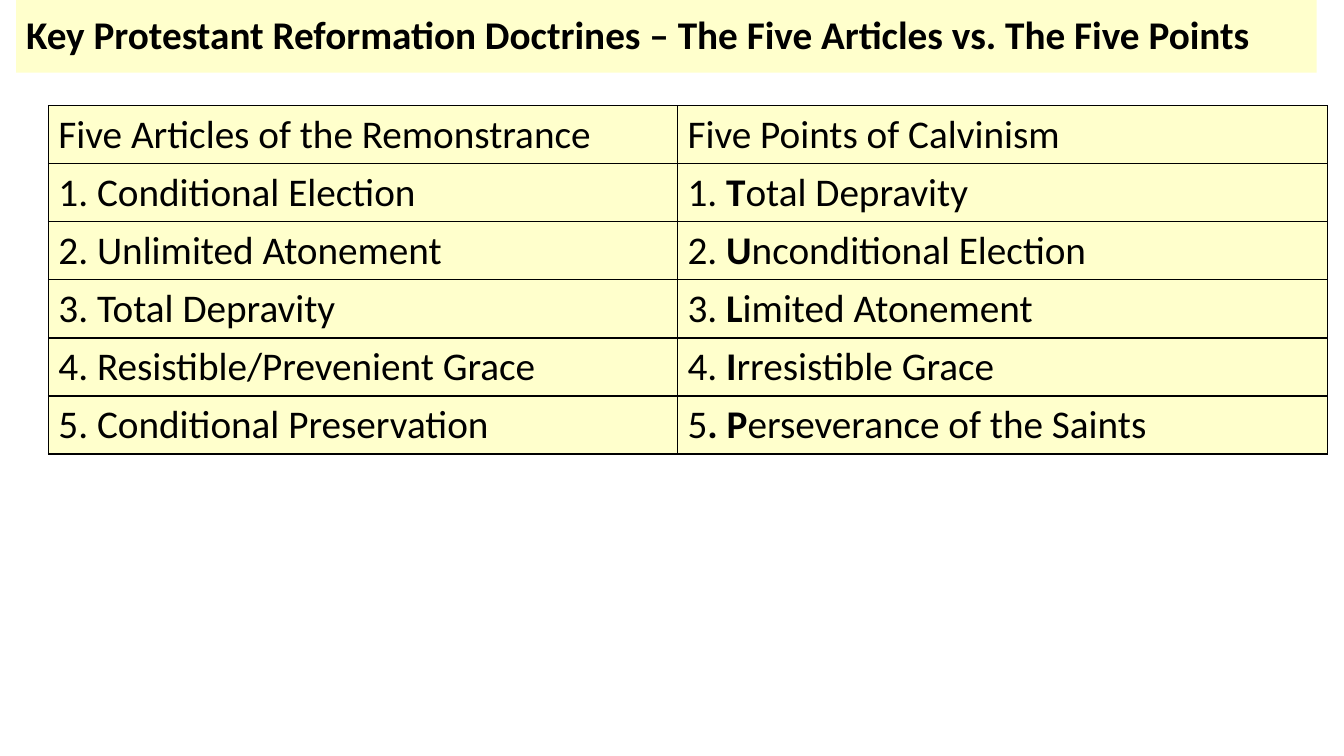
from lxml.etree import SubElement
from pptx import Presentation
from pptx.dml.color import RGBColor
from pptx.enum.text import MSO_ANCHOR, MSO_AUTO_SIZE, PP_ALIGN
from pptx.oxml.ns import qn
from pptx.util import Inches, Pt

CREAM = RGBColor(0xFF, 0xFF, 0xCC)
BLACK = RGBColor(0, 0, 0)


def style(run, bold):
    run.font.name = "Calibri"
    run.font.size = Pt(28)
    run.font.bold = bold
    run.font.color.rgb = BLACK


def border(cell):
    """Draw a 1 pt black line on all four sides of the cell."""
    props = cell._tc.get_or_add_tcPr()
    for side in ("a:lnL", "a:lnR", "a:lnT", "a:lnB"):
        line = SubElement(props, qn(side), w=str(Pt(1)))
        paint = SubElement(line, qn("a:solidFill"))
        SubElement(paint, qn("a:srgbClr"), val=str(BLACK))


prs = Presentation()
prs.slide_width = Inches(13.33)
prs.slide_height = Inches(7.5)
slide = prs.slides.add_slide(prs.slide_layouts[5])

title = slide.shapes.title
title.left, title.top = Inches(0.16), Inches(0)
title.width, title.height = Inches(12.9), Inches(0.72)
title.fill.solid()
title.fill.fore_color.rgb = CREAM
frame = title.text_frame
frame.text = "Key Protestant Reformation Doctrines – The Five Articles vs. The Five Points"
frame.word_wrap = True
frame.auto_size = MSO_AUTO_SIZE.NONE
frame.vertical_anchor = MSO_ANCHOR.MIDDLE
heading = frame.paragraphs[0]
heading.alignment = PP_ALIGN.LEFT
heading.line_spacing = 0.9
style(heading.runs[0], True)

# Each cell is a list of runs; every second run is bold.
rows = [
    (["Five Articles of the Remonstrance"], ["Five Points of Calvinism"]),
    (["1. Conditional Election"], ["1. ", "T", "otal Depravity"]),
    (["2. Unlimited Atonement"], ["2. ", "U", "nconditional Election"]),
    (["3. Total Depravity"], ["3. ", "L", "imited Atonement"]),
    (["4. Resistible/Prevenient Grace"], ["4. ", "I", "rresistible Grace"]),
    (["5. Conditional Preservation"], ["5", ". P", "erseverance of the Saints"]),
]
widths = [6.24, 6.45]
height = 0.57

table = slide.shapes.add_table(
    len(rows), len(widths), Inches(0.48), Inches(1.05),
    Inches(sum(widths)), Inches(height * len(rows))).table
table.first_row = False
table.horz_banding = False
for column, width in zip(table.columns, widths):
    column.width = Inches(width)

for r, row in enumerate(rows):
    table.rows[r].height = Inches(height)
    for c, parts in enumerate(row):
        cell = table.cell(r, c)
        border(cell)
        cell.fill.solid()
        cell.fill.fore_color.rgb = CREAM
        for i, part in enumerate(parts):
            run = cell.text_frame.paragraphs[0].add_run()
            run.text = part
            style(run, i % 2 == 1)

prs.save("out.pptx")
